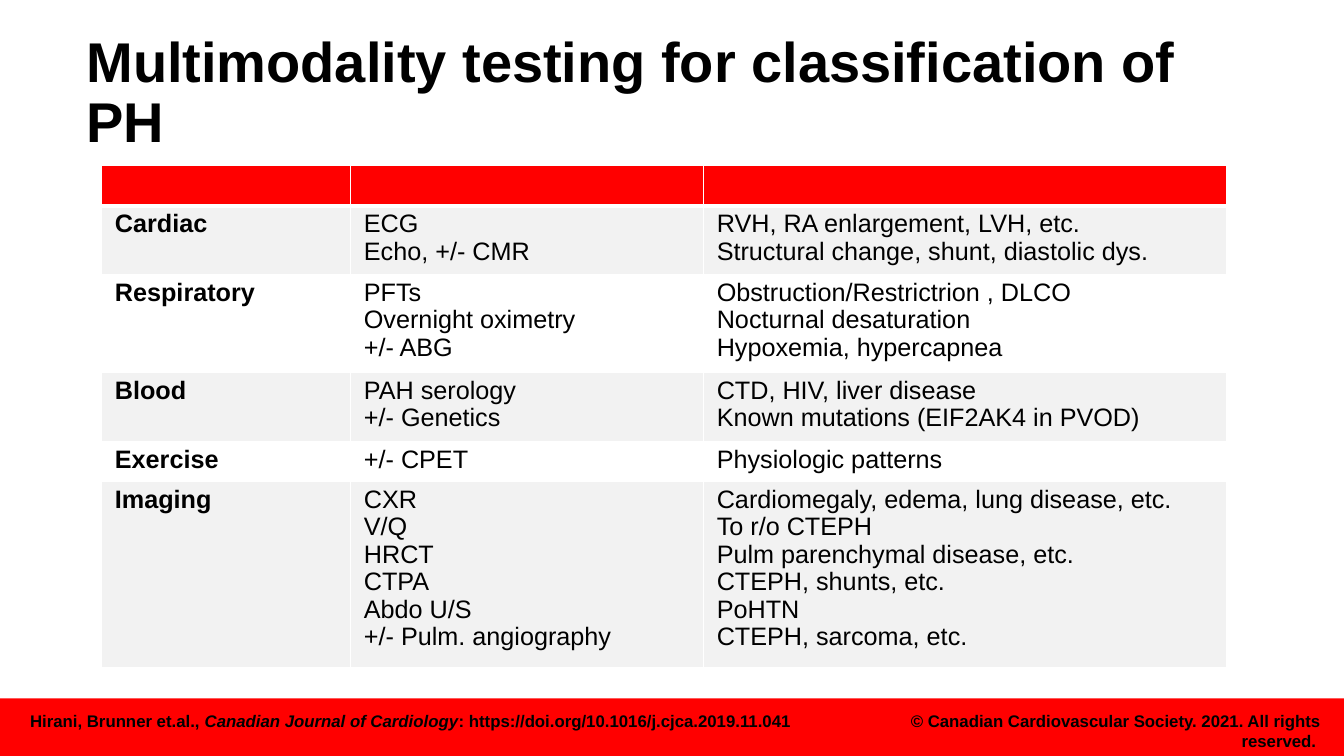
"""Builds a slide with a table of tests used to classify pulmonary hypertension."""
from lxml import etree
from pptx import Presentation
from pptx import util as u
from pptx.dml.color import RGBColor
from pptx.enum import shapes, text
from pptx.oxml import ns

RED, BLACK, WHITE, GREY = "FF0000", "000000", "FFFFFF", "F2F2F2"
WIDTH, HEIGHT = 13.33, 7.5


def color(target, value):
    if hasattr(target, "solid"):
        target.solid()
        target = target.fore_color
    target.rgb = RGBColor.from_string(value)


def write(frame, lines, size, bold, spacing=None, align=None):
    frame.word_wrap = True
    frame.text = "\n".join(lines)
    for paragraph in frame.paragraphs:
        paragraph.line_spacing = spacing
        paragraph.alignment = align
        for run in paragraph.runs:
            run.font.size = u.Pt(size)
            run.font.name = "Arial"
            run.font.bold = bold
            color(run.font.color, BLACK)


deck = Presentation()
deck.slide_width, deck.slide_height = u.Inches(WIDTH), u.Inches(HEIGHT)
slide = deck.slides.add_slide(deck.slide_layouts[6])

footer_top = 6.93
band = slide.shapes.add_shape(
    shapes.MSO_SHAPE.RECTANGLE, 0, u.Inches(footer_top),
    u.Inches(WIDTH), u.Inches(HEIGHT - footer_top))
band.shadow.inherit = False
color(band.fill, RED)
band.line.fill.background()

footers = [
    (0.2, 8, text.PP_ALIGN.LEFT,
     ["Hirani, Brunner et.al., ", "Canadian Journal of Cardiology",
      ": https://doi.org/10.1016/j.cjca.2019.11.041"]),
    (8.7, 4.5, text.PP_ALIGN.RIGHT,
     ["© Canadian Cardiovascular Society. 2021. All rights reserved. "]),
]
for left, width, align, parts in footers:
    footer = slide.shapes.add_textbox(
        u.Inches(left), u.Inches(7), u.Inches(width), u.Inches(0.3)).text_frame
    write(footer, parts[:1], 12, True, align=align)
    line = footer.paragraphs[0]
    for part in parts[1:]:
        run = line.add_run()
        run.text = part
        run.font.size, run.font.name, run.font.bold = u.Pt(12), "Arial", True
        run.font.italic = part.startswith("Canadian")
        color(run.font.color, BLACK)
    for run in line.runs:
        fill = run.font.color and run.font._element.find(ns.qn("a:solidFill"))
        effects = etree.Element(ns.qn("a:effectLst"))
        shadow = etree.SubElement(
            effects, ns.qn("a:outerShdw"),
            blurRad="38100", dist="38100", dir="2700000", algn="tl")
        etree.SubElement(shadow, ns.qn("a:srgbClr"), val=WHITE)
        fill.addnext(effects)

title = slide.shapes.add_textbox(
    u.Inches(0.76), u.Inches(0.4), u.Inches(11.81), u.Inches(1.07)).text_frame
title.vertical_anchor = text.MSO_ANCHOR.MIDDLE
write(title, ["Multimodality testing for classification of PH"], 40, True, 0.9)

tests = [
    ([], [], []),
    (["Cardiac"], ["ECG", "Echo, +/- CMR"],
     ["RVH, RA enlargement, LVH, etc.", "Structural change, shunt, diastolic dys."]),
    (["Respiratory"], ["PFTs", "Overnight oximetry", "+/- ABG"],
     ["Obstruction/Restrictrion , DLCO", "Nocturnal desaturation",
      "Hypoxemia, hypercapnea"]),
    (["Blood"], ["PAH serology", "+/- Genetics"],
     ["CTD, HIV, liver disease", "Known mutations (EIF2AK4 in PVOD)"]),
    (["Exercise"], ["+/- CPET"], ["Physiologic patterns"]),
    (["Imaging"],
     ["CXR", "V/Q", "HRCT", "CTPA", "Abdo U/S", "+/- Pulm. angiography"],
     ["Cardiomegaly, edema, lung disease, etc.", "To r/o CTEPH",
      "Pulm parenchymal disease, etc.", "CTEPH, shunts, etc.", "PoHTN",
      "CTEPH, sarcoma, etc."]),
]
column_widths = [2.47, 3.5, 5.19]
row_heights = [0.4, 0.66, 0.95, 0.65, 0.4, 1.77]
grid = slide.shapes.add_table(
    len(tests), len(column_widths), u.Inches(1.01), u.Inches(1.64),
    u.Inches(sum(column_widths)), u.Inches(sum(row_heights))).table
for column, width in zip(grid.columns, column_widths):
    column.width = u.Inches(width)

for r, (row, height) in enumerate(zip(tests, row_heights)):
    grid.rows[r].height = u.Inches(height)
    for c, lines in enumerate(row):
        cell = grid.cell(r, c)
        cell.margin_left = cell.margin_right = u.Inches(0.13)
        cell.margin_top = cell.margin_bottom = u.Inches(0.05)
        write(cell.text_frame, lines, 18, c == 0, 0.97)
        properties = cell._tc.get_or_add_tcPr()
        for side in ("lnL", "lnR", "lnT", "lnB"):
            heavy = (r == 0 and side == "lnB") or (r == 1 and side == "lnT")
            border = etree.SubElement(
                properties, ns.qn("a:" + side), w=str(u.Pt(3 if heavy else 1)))
            paint = etree.SubElement(border, ns.qn("a:solidFill"))
            etree.SubElement(paint, ns.qn("a:srgbClr"), val=WHITE)
        color(cell.fill, RED if r == 0 else GREY if r % 2 else WHITE)

deck.save("out.pptx")
